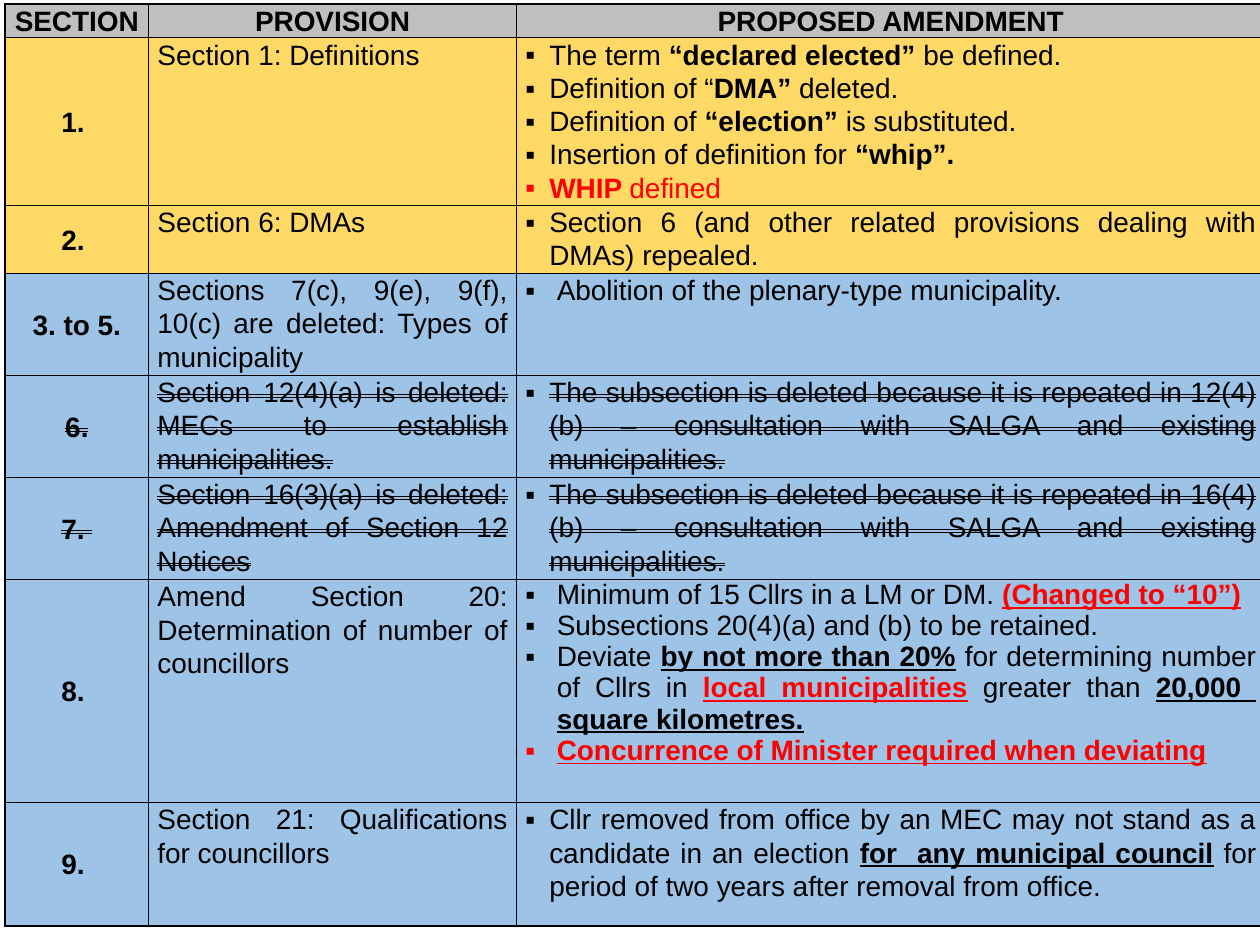
from pptx import Presentation
from pptx.dml.color import RGBColor
from pptx.enum.text import MSO_ANCHOR, PP_ALIGN
from pptx.oxml.ns import qn
from pptx.util import Inches, Pt
from lxml.etree import SubElement, Element

GREY, YELLOW, BLUE = "BFBFBF", "FFD966", "9DC3E6"
BLACK, RED = "000000", "FF0000"


def color(value):
    return RGBColor.from_string(value)


def fill_cell(cell, paragraphs, fill, inset, align, spacing, indent):
    cell.fill.solid()
    cell.fill.fore_color.rgb = color(fill)
    cell.margin_left = cell.margin_right = Inches(inset)
    cell.margin_top = cell.margin_bottom = 0
    properties = cell._tc.get_or_add_tcPr()
    for position, side in enumerate(("lnL", "lnR", "lnT", "lnB")):
        border = Element(qn(f"a:{side}"), w=str(Pt(1)))
        paint = SubElement(border, qn("a:solidFill"))
        SubElement(paint, qn("a:srgbClr"), val=BLACK)
        properties.insert(position, border)

    frame = cell.text_frame
    frame.text = "\n".join("" for _ in paragraphs)
    for para, spans in zip(frame.paragraphs, paragraphs):
        para.alignment = align
        para.line_spacing = spacing
        if indent:
            bullet = para._p.get_or_add_pPr()
            bullet.set("marL", str(Inches(indent)))
            bullet.set("indent", str(-Inches(indent)))
            SubElement(bullet, qn("a:buFont"), typeface="Arial")
            SubElement(bullet, qn("a:buChar"), char="▪")
        for text, style in spans:
            span = para.add_run()
            span.text = text
            span.font.name = "Arial"
            span.font.size = Pt(16)
            span.font.bold = "b" in style
            span.font.underline = "u" in style
            span.font.color.rgb = color(RED if "r" in style else BLACK)
            if "s" in style:
                span._r.get_or_add_rPr().set("strike", "dblStrike")


headings = ["SECTION", "PROVISION", "PROPOSED AMENDMENT"]
column_widths = [1.14, 2.92, 5.94]
repeated = ("The subsection is deleted because it is repeated in {}(4)(b) – "
            "consultation with SALGA and existing municipalities.")

# Each span is (text, style): b bold, u underlined, r red, s struck through.
amendments = [
    ("1. ", "Section 1: Definitions", "", YELLOW, 1.33, 0.19, 1.07, [
        [("The term ", ""), ("“declared elected”", "b"), (" be defined.", "")],
        [("Definition of “", ""), ("DMA” ", "b"), ("deleted.", "")],
        [("Definition of ", ""), ("“election” ", "b"), ("is substituted.", "")],
        [("Insertion of definition for ", ""), ("“whip”.", "b")],
        [("WHIP ", "br"), ("defined", "r")],
    ]),
    ("2. ", "Section 6: DMAs", "", YELLOW, 0.54, 0.19, 1.07, [
        [("Section 6 (and other related provisions dealing with DMAs) repealed. ", "")],
    ]),
    ("3. to 5.", "Sections 7(c), 9(e), 9(f), 10(c) are deleted: Types of municipality",
     "", BLUE, 0.81, 0.25, 1.07, [
         [("Abolition of the plenary-type municipality.", "")],
     ]),
    ("6.", "Section 12(4)(a) is deleted: MECs to establish municipalities.",
     "s", BLUE, 0.81, 0.19, 1.07, [[(repeated.format(12), "s")]]),
    ("7. ", "Section 16(3)(a) is deleted: Amendment of Section 12 Notices",
     "s", BLUE, 0.81, 0.19, 1.07, [[(repeated.format(16), "s")]]),
    ("8. ", "Amend Section 20: Determination of number of councillors ",
     "", BLUE, 1.77, 0.25, 1.0, [
         [("Minimum of 15 Cllrs in a LM or DM. ", ""), ("(Changed to “10”)", "bur")],
         [("Subsections 20(4)(a) and (b) to be retained.", "")],
         [("Deviate ", ""), ("by not more than 20%", "bu"),
          (" for determining number of Cllrs in ", ""), ("local municipalities", "bur"),
          (" greater than ", ""), ("20,000  square kilometres.", "bu")],
         [("Concurrence of Minister required when deviating", "bur")],
     ]),
    ("9. ", "Section 21: Qualifications for councillors", "", BLUE, 0.98, 0.19, 1.07, [
        [("Cllr removed from office by an MEC may not stand as a candidate in an election ", ""),
         ("for  any municipal council", "bu"),
         (" for period of two years after removal from office.", "")],
    ]),
]

deck = Presentation()
deck.slide_width, deck.slide_height = Inches(10), Inches(7.5)
page = deck.slides.add_slide(deck.slide_layouts[6])

row_heights = [0.27] + [amendment[4] for amendment in amendments]
table = page.shapes.add_table(len(row_heights), len(headings), Inches(0.04), Inches(0.03),
                              Inches(10), Inches(sum(row_heights))).table
for column, width in zip(table.columns, column_widths):
    column.width = Inches(width)
for row, height in zip(table.rows, row_heights):
    row.height = Inches(height)

for column_index, heading in enumerate(headings):
    fill_cell(table.cell(0, column_index), [[(heading, "b")]], GREY, 0.06,
              PP_ALIGN.CENTER, 1.07, 0)

for row_index, amendment in enumerate(amendments, start=1):
    number, provision, style, fill, height, indent, spacing, points = amendment
    section_cell, provision_cell, amendment_cell = table.rows[row_index].cells
    section_cell.vertical_anchor = MSO_ANCHOR.MIDDLE
    fill_cell(section_cell, [[(number, "b" + style)]], fill, 0.06, PP_ALIGN.CENTER, 1.07, 0)
    fill_cell(provision_cell, [[(provision, style)]], fill, 0.07, PP_ALIGN.JUSTIFY, 1.07, 0)
    fill_cell(amendment_cell, points, fill, 0.07, PP_ALIGN.JUSTIFY, spacing, indent)

deck.save("out.pptx")
